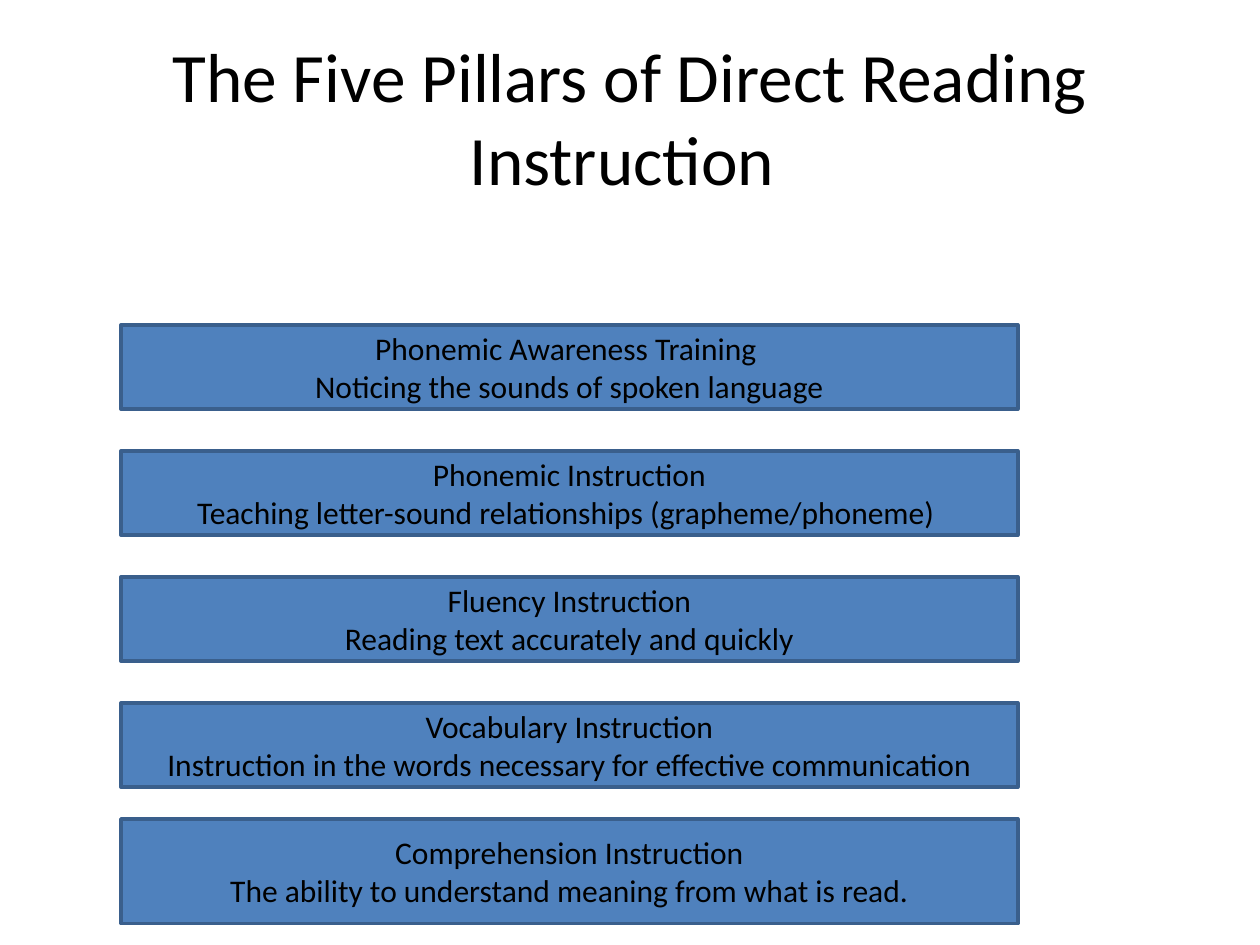
from pptx import Presentation
from pptx.dml.color import RGBColor as Rgb
from pptx.enum.shapes import MSO_SHAPE as Shape
from pptx.enum.text import MSO_ANCHOR as Anchor, MSO_AUTO_SIZE as Auto, PP_ALIGN as Align
from pptx.util import Cm, Pt

TITLE = "The Five Pillars of Direct Reading Instruction "
PILLARS = [
    ("Phonemic Awareness Training ", "Noticing the sounds of spoken language"),
    ("Phonemic Instruction", "Teaching letter-sound relationships (grapheme/phoneme) "),
    ("Fluency Instruction", "Reading text accurately and quickly"),
    ("Vocabulary Instruction",
     "Instruction in the words necessary for effective communication"),
    ("Comprehension Instruction",
     " The ability to understand meaning from what is read. "),
]
COLORS = {"fill": "4F81BD", "line": "3A5F8C", "text": "000000"}
FONT = "Calibri"

# Bar grid in cm; the last bar is taller and sits a little higher
LEFT, TOP, WIDTH, HEIGHT, STEP = 2.44, 6.55, 18.08, 1.7, 2.54
LAST_TOP, LAST_HEIGHT = 16.51, 2.11


def color(name):
    return Rgb.from_string(COLORS[name])


def write(frame, lines, size):
    frame.word_wrap = True
    frame.auto_size = Auto.NONE
    frame.vertical_anchor = Anchor.MIDDLE
    for i, line in enumerate(lines):
        para = frame.add_paragraph() if i else frame.paragraphs[0]
        para.alignment = Align.CENTER
        run = para.add_run()
        run.text = line
        run.font.name = FONT
        run.font.size = Pt(size)
        run.font.color.rgb = color("text")


def add_bar(slide, lines, top, height):
    bar = slide.shapes.add_shape(
        Shape.RECTANGLE, Cm(LEFT), Cm(top), Cm(WIDTH), Cm(height))
    bar.shadow.inherit = False
    bar.fill.solid()
    bar.fill.fore_color.rgb = color("fill")
    bar.line.color.rgb = color("line")
    bar.line.width = Pt(2)
    write(bar.text_frame, lines, 18)


def main():
    deck = Presentation()
    deck.slide_width, deck.slide_height = Cm(25.4), Cm(19.05)
    slide = deck.slides.add_slide(deck.slide_layouts[5])

    title = slide.shapes.title
    title.left, title.top = Cm(1.27), Cm(0.76)
    title.width, title.height = Cm(22.86), Cm(3.18)
    write(title.text_frame, [TITLE], 39.6)

    for i, lines in enumerate(PILLARS[:-1]):
        add_bar(slide, lines, TOP + i * STEP, HEIGHT)
    add_bar(slide, PILLARS[-1], LAST_TOP, LAST_HEIGHT)

    deck.save("out.pptx")


if __name__ == "__main__":
    main()
